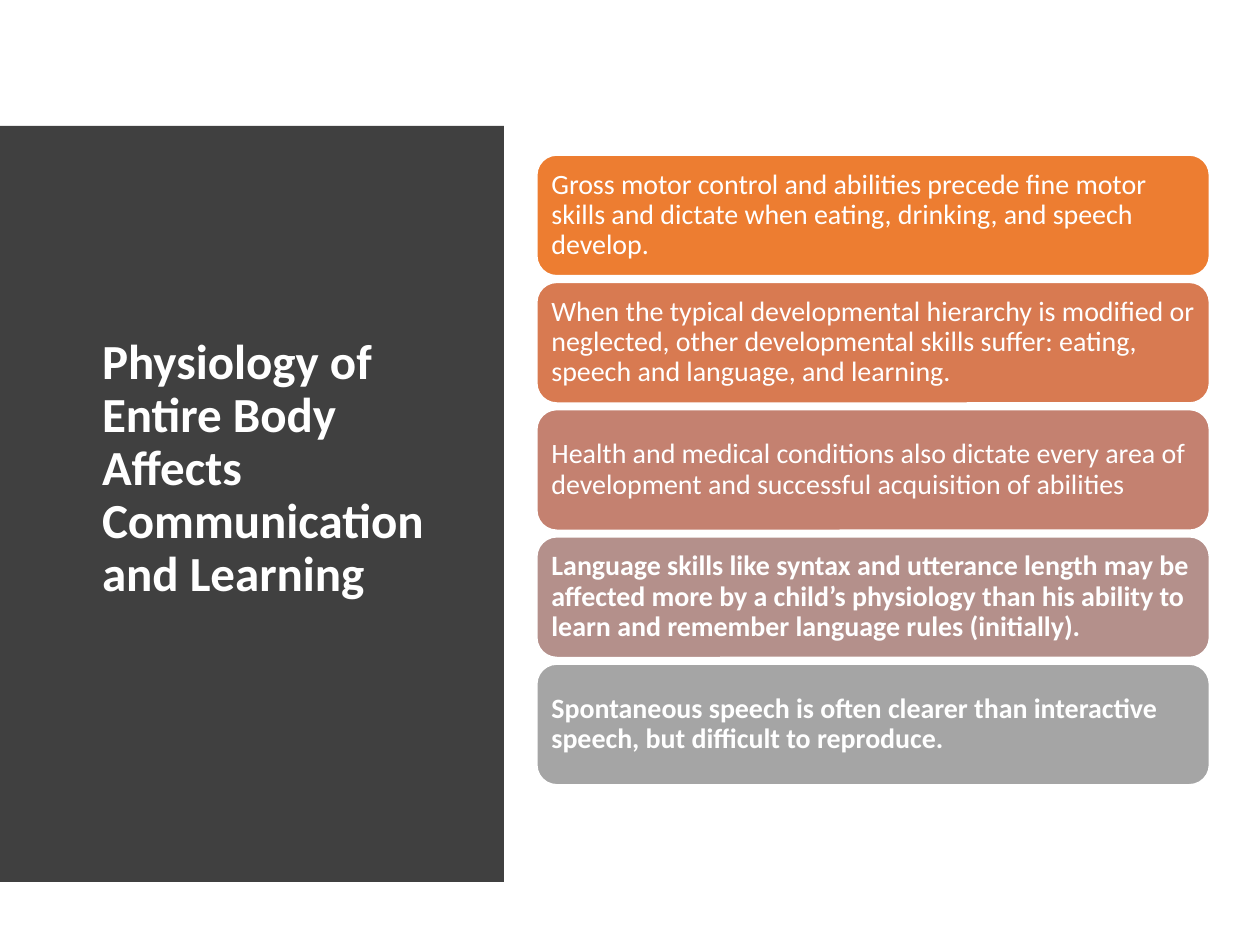
from dataclasses import dataclass

from pptx import Presentation
from pptx import util as u
from pptx.dml.color import RGBColor
from pptx.enum import shapes, text

WIDTH, HEIGHT = 10, 7.5
FONT, WHITE = "Calibri", "FFFFFF"
PANEL_LEFT, PANEL_TOP, PANEL_EDGE, PANEL_BOTTOM = 0.4, 0.52, 3.81, 6.96
BULGE, CURVE_STEPS = 0.18, 48
CARD_LEFT, CARD_TOP, CARD_WIDTH, CARD_HEIGHT = 4.26, 1.23, 5.34, 0.96
ROW_PITCH = 1.01


@dataclass
class Card:
    wording: str
    fill: str
    bold: bool = False


CARDS = [
    Card("Gross motor control and abilities precede fine motor skills and "
         "dictate when eating, drinking, and speech develop.", "ED7D31"),
    Card("When the typical developmental hierarchy is modified or neglected, "
         "other developmental skills suffer: eating, speech and language, "
         "and learning.", "D87A51"),
    Card("Health and medical conditions also dictate every area of "
         "development and successful acquisition of abilities", "C48170"),
    Card("Language skills like syntax and utterance length may be affected "
         "more by a child’s physiology than his ability to learn and "
         "remember language rules (initially).", "B4908B", True),
    Card("Spontaneous speech is often clearer than interactive speech, but "
         "difficult to reproduce.", "A5A5A5", True),
]


def rgb(value: str) -> RGBColor:
    return RGBColor.from_string(value)


def paint(sp, fill: str) -> None:
    sp.shadow.inherit = False
    sp.fill.solid()
    sp.fill.fore_color.rgb = rgb(fill)


def write(sp, wording: str, size: float, bold: bool) -> None:
    tf = sp.text_frame
    tf.word_wrap = True
    tf.auto_size = text.MSO_AUTO_SIZE.NONE
    tf.vertical_anchor = text.MSO_ANCHOR.MIDDLE
    p = tf.paragraphs[0]
    p.alignment = text.PP_ALIGN.LEFT
    p.line_spacing = 0.9
    r = p.add_run()
    r.text = wording
    r.font.name = FONT
    r.font.size = u.Pt(size)
    r.font.bold = bold
    r.font.color.rgb = rgb(WHITE)


def draw_panel(s):
    middle = (PANEL_TOP + PANEL_BOTTOM) / 2
    half = (PANEL_BOTTOM - PANEL_TOP) / 2
    curve = []
    for i in range(CURVE_STEPS + 1):
        t = 2 * i / CURVE_STEPS - 1
        curve.append((PANEL_EDGE + BULGE * (1 - t * t), middle + half * t))
    builder = s.shapes.build_freeform(PANEL_LEFT, PANEL_TOP, scale=u.Inches(1))
    builder.add_line_segments(curve + [(PANEL_LEFT, PANEL_BOTTOM)], close=True)
    sp = builder.convert_to_shape()
    paint(sp, "404040")
    sp.line.fill.background()
    return sp


def draw_card(s, row: int, card: Card) -> None:
    sp = s.shapes.add_shape(
        shapes.MSO_SHAPE.ROUNDED_RECTANGLE,
        u.Inches(CARD_LEFT), u.Inches(CARD_TOP + row * ROW_PITCH),
        u.Inches(CARD_WIDTH), u.Inches(CARD_HEIGHT))
    paint(sp, card.fill)
    sp.line.color.rgb = rgb(WHITE)
    sp.line.width = u.Pt(1)
    tf = sp.text_frame
    tf.margin_left = tf.margin_right = u.Inches(0.07)
    tf.margin_top = tf.margin_bottom = u.Inches(0.07)
    write(sp, card.wording, 16, card.bold)


def main() -> None:
    prs = Presentation()
    prs.slide_width, prs.slide_height = u.Inches(WIDTH), u.Inches(HEIGHT)
    s = prs.slides.add_slide(prs.slide_layouts[5])
    title = s.shapes.title
    title.left, title.top = u.Inches(0.71), u.Inches(1.11)
    title.width, title.height = u.Inches(2.8), u.Inches(5.24)
    write(title, "Physiology of Entire Body Affects Communication and Learning",
          28, True)
    panel = draw_panel(s)
    title.element.addprevious(panel.element)
    for row, card in enumerate(CARDS):
        draw_card(s, row, card)
    prs.save("out.pptx")


if __name__ == "__main__":
    main()
